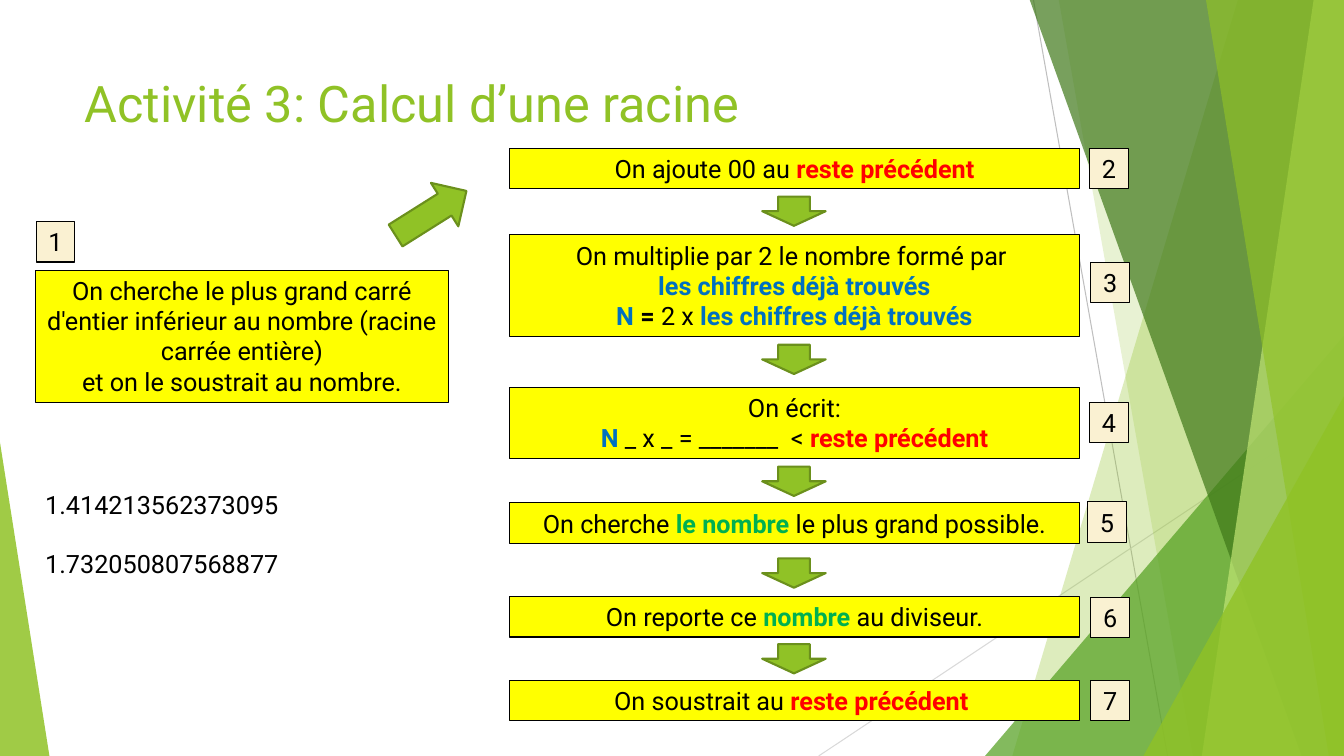
"""Build the slide on computing a square root by hand."""
from lxml import etree
from pptx import Presentation, util as u
from pptx.dml.color import RGBColor
from pptx.enum import shapes, text
from pptx.oxml.ns import qn

SHAPE = shapes.MSO_SHAPE
ALIGN = text.PP_ALIGN
GREEN, BLACK, YELLOW, CREAM = "90C226", "000000", "FFFF00", "FAF1D2"
STYLES = {
    "plain": (BLACK, False),
    "strong": (BLACK, True),
    "rest": ("FF0000", True),
    "digits": ("0070C0", True),
    "found": ("00B050", True),
    "title": (GREEN, False),
}
GUIDES = [((10.25, 0), (11.58, 7.5), "BFBFBF"), ((13.33, 4.03), (8.12, 7.5), "D9D9D9")]
BACK_BANDS = [(12.28, 10.04, GREEN, 30), (10.5, 11.83, GREEN, 20)]
FRONT_BANDS = [(10.21, 12.91, "3F7819", 70), (13.03, 11.92, "C0E474", 70),
               (11.96, 13.18, GREEN, 65)]
BACK_TRIANGLE = (9.77, 3.33, 3.56, 4.17), 1, "54A021", 72
FRONT_TRIANGLES = [((11.34, 3.93, 1.99, 3.57), 1, GREEN, 80),
                   ((0, 4.39, 0.49, 3.11), 0, GREEN, 85)]
FIRST_STEP = [[("On cherche le plus grand carré d'entier inférieur au nombre "
                "(racine carrée entière)\net on le soustrait au nombre.", "plain")]]
STEPS = [
    (1.47, 0.4, [[("On ajoute 00 au ", "plain"), ("reste précédent", "rest")]]),
    (2.33, 1.01, [[("On multiplie par 2 le nombre formé par \n", "plain"),
                   ("les chiffres déjà trouvés\nN ", "digits"), ("= ", "strong"),
                   ("2 x ", "plain"), ("les chiffres déjà trouvés", "digits")]]),
    (3.84, 0.71, [[("On écrit:", "plain")],
                  [("N ", "digits"), ("_ x _ = _______  < ", "plain"),
                   ("reste précédent", "rest")]]),
    (4.99, 0.4, [[("On cherche ", "plain"), ("le nombre ", "found"),
                  ("le plus grand possible.", "plain")]]),
    (5.92, 0.4, [[("On reporte ce ", "plain"), ("nombre", "found"),
                  (" au diviseur.", "plain")]]),
    (6.75, 0.4, [[("On soustrait au ", "plain"), ("reste précédent ", "rest")]]),
]
BADGES = [(0.36, 2.2), (10.81, 1.47), (10.82, 2.6), (10.81, 3.99),
          (10.79, 4.98), (10.82, 5.93), (10.82, 6.75)]
ARROW_TOPS = [1.95, 3.42, 4.63, 5.54, 6.39]
ROOTS = [[("1.414213562373095", "plain")], [("1.732050807568877", "plain")]]


def colour(value):
    """Turn a hex string into a colour."""
    return RGBColor.from_string(value)


def inches(values):
    """Convert a sequence of numbers to lengths."""
    return [u.Inches(value) for value in values]


def assign(target, values):
    """Set each named attribute on the target."""
    for name, value in values.items():
        setattr(target, name, value)


def paint(shape, fill, line=None, width=0.75, opacity=100):
    """Give a shape its fill, opacity and outline."""
    shape.shadow.inherit = False
    shape.fill.solid()
    shape.fill.fore_color.rgb = colour(fill)
    if opacity < 100:
        tint = shape.fill._xPr.find(qn("a:solidFill"))[0]
        etree.SubElement(tint, qn("a:alpha")).set("val", str(opacity * 1000))
    if line:
        shape.line.color.rgb = colour(line)
        shape.line.width = u.Pt(width)
    else:
        shape.line.fill.background()


def write(shape, paragraphs, size=18, align=ALIGN.CENTER, gap=0,
          fit=text.MSO_AUTO_SIZE.SHAPE_TO_FIT_TEXT):
    """Fill a shape with styled paragraphs."""
    frame = shape.text_frame
    assign(frame, {"word_wrap": True, "auto_size": fit,
                   "vertical_anchor": text.MSO_ANCHOR.TOP})
    for index, spans in enumerate(paragraphs):
        para = frame.add_paragraph() if index else frame.paragraphs[0]
        assign(para, {"alignment": align, "space_before": u.Pt(gap if index else 0)})
        for words, style in spans:
            hue, bold = STYLES[style]
            for row, part in enumerate(words.split("\n")):
                if row:
                    para.add_line_break()
                if part:
                    span = para.add_run()
                    span.text = part
                    assign(span.font, {"name": "Roboto", "size": u.Pt(size), "bold": bold})
                    span.font.color.rgb = colour(hue)


def add_guide(page, start, end, hue):
    """Draw a thin background line."""
    line = page.shapes.add_connector(shapes.MSO_CONNECTOR.STRAIGHT, *inches(start + end))
    line.line.color.rgb = colour(hue)
    line.line.width = u.Pt(0.75)
    etree.SubElement(line._element.spPr, qn("a:effectLst"))


def add_band(page, top_left, bottom_left, hue, opacity):
    """Draw a slanted band that reaches the right edge."""
    corners = [(top_left, -0.01), (13.33, -0.01), (13.33, 7.5), (bottom_left, 7.5)]
    points = [inches(corner) for corner in corners]
    builder = page.shapes.build_freeform(*points[0])
    builder.add_line_segments(points[1:], close=True)
    paint(builder.convert_to_shape(), hue, opacity=opacity)


def add_triangle(page, place, apex, hue, opacity):
    """Draw a right-angled background triangle."""
    triangle = page.shapes.add_shape(SHAPE.ISOSCELES_TRIANGLE, *inches(place))
    triangle.adjustments[0] = apex
    paint(triangle, hue, opacity=opacity)


def add_backdrop(page):
    """Draw the layered green facets."""
    for guide in GUIDES:
        add_guide(page, *guide)
    for band in BACK_BANDS:
        add_band(page, *band)
    add_triangle(page, *BACK_TRIANGLE)
    for band in FRONT_BANDS:
        add_band(page, *band)
    for triangle in FRONT_TRIANGLES:
        add_triangle(page, *triangle)


def add_box(page, place, fill, paragraphs):
    """Draw an outlined box with centred text."""
    box = page.shapes.add_shape(SHAPE.RECTANGLE, *inches(place))
    paint(box, fill, BLACK)
    write(box, paragraphs)


def add_arrow(page, place, rotation=0):
    """Draw a green block arrow."""
    arrow = page.shapes.add_shape(SHAPE.DOWN_ARROW, *inches(place))
    arrow.rotation = rotation
    paint(arrow, GREEN, "6B901C", 1.5)


def add_text(page, place, paragraphs, **options):
    """Place left-aligned text without a frame."""
    box = page.shapes.add_textbox(*inches(place))
    write(box, paragraphs, align=ALIGN.LEFT, **options)


def main():
    """Assemble and save the slide."""
    deck = Presentation()
    assign(deck, {"slide_width": u.Inches(13.33), "slide_height": u.Inches(7.5)})
    page = deck.slides.add_slide(deck.slide_layouts[6])
    add_backdrop(page)
    add_text(page, (0.74, 0.67, 9.4, 1.44), [[("Activité 3: Calcul d’une racine", "title")]],
             size=36, fit=text.MSO_AUTO_SIZE.NONE)
    add_box(page, (0.35, 2.68, 4.1, 1.31), YELLOW, FIRST_STEP)
    for top, height, paragraphs in STEPS:
        add_box(page, (5.05, top, 5.66, height), YELLOW, paragraphs)
    add_arrow(page, (4.02, 1.7, 0.51, 0.83), 237.8)
    for top in ARROW_TOPS:
        add_arrow(page, (7.56, top, 0.63, 0.29))
    for number, (left, top) in enumerate(BADGES, 1):
        add_box(page, (left, top, 0.38, 0.4), CREAM, [[(str(number), "plain")]])
    add_text(page, (0.35, 4.8, 4.4, 1.01), ROOTS, gap=21)
    deck.save("out.pptx")


if __name__ == "__main__":
    main()
